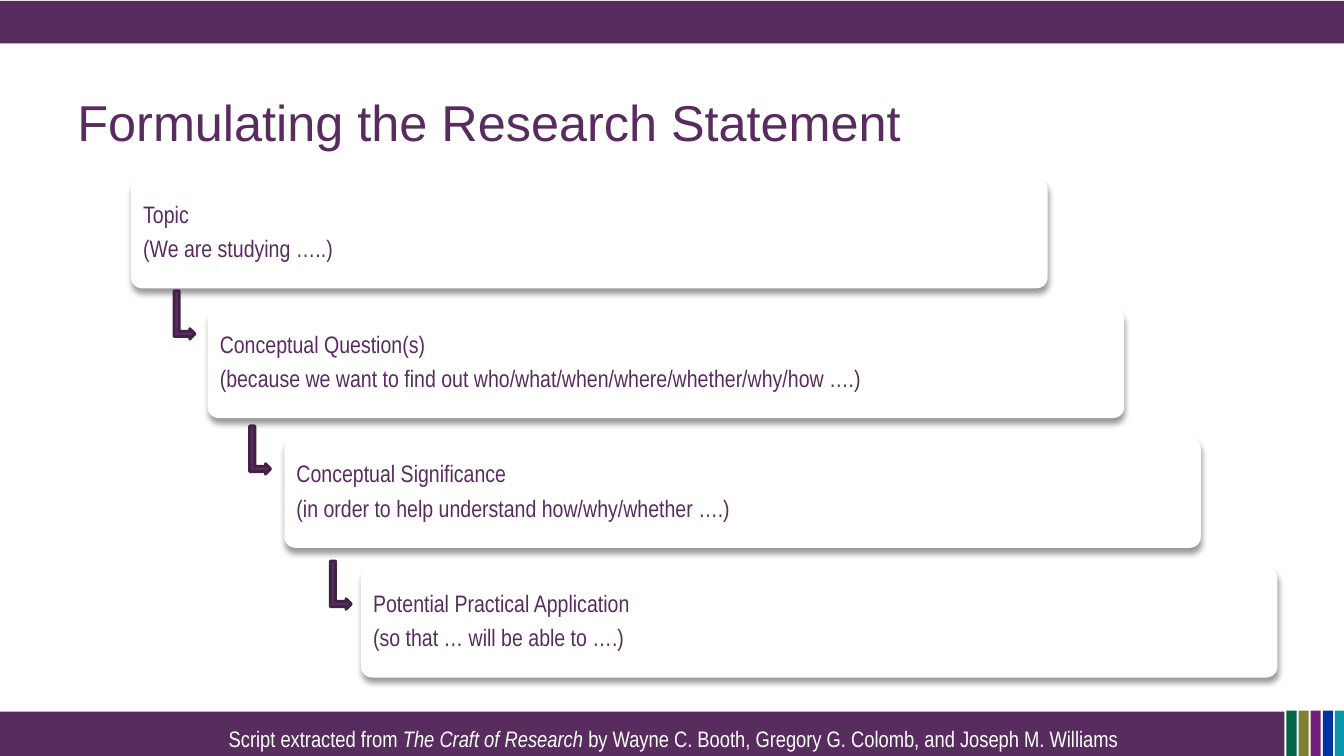
from pptx import Presentation
from pptx.dml.color import RGBColor
from pptx.enum.shapes import MSO_SHAPE
from pptx.enum.text import MSO_ANCHOR, PP_ALIGN
from pptx.oxml import parse_xml
from pptx.oxml.ns import nsdecls
from pptx.util import Inches, Pt

PLUM = RGBColor(0x59, 0x2C, 0x5F)
DARK = RGBColor(0x42, 0x21, 0x46)
WHITE = RGBColor(0xFF, 0xFF, 0xFF)
STRIPES = [
    RGBColor(0x00, 0x66, 0x47),
    RGBColor(0x7E, 0x80, 0x34),
    RGBColor(0x71, 0x21, 0x77),
    RGBColor(0x00, 0x33, 0xA0),
    RGBColor(0x09, 0x96, 0xA9),
]

TITLE = "Formulating the Research Statement"
STEPS = [
    ("Topic", "(We are studying …..)"),
    ("Conceptual Question(s)",
     "(because we want to find out who/what/when/where/whether/why/how ….)"),
    ("Conceptual Significance",
     "(in order to help understand how/why/whether ….)"),
    ("Potential Practical Application", "(so that … will be able to ….)"),
]
CREDIT = [
    ("Script extracted from ", False),
    ("The Craft of Research ", True),
    ("by Wayne C. Booth, Gregory G. Colomb, and Joseph M. Williams", False),
]
ARROWS = [1.59, 2.34, 3.14]

WIDE, HIGH = 13.33, 7.5
LEFT, TOP = 1.3, 1.77
RIGHT, DOWN = 0.76, 1.287
CARD_W, CARD_H = 9.09, 1.09

SHADOW = (
    f'<a:effectLst {nsdecls("a")}>'
    f'<a:outerShdw blurRad="{Pt(4)}" dist="{Pt(3.4)}" dir="5400000" '
    'algn="ctr" rotWithShape="0"><a:srgbClr val="000000">'
    '<a:alpha val="40000"/></a:srgbClr></a:outerShdw></a:effectLst>'
)

deck = Presentation()
deck.slide_width, deck.slide_height = Inches(WIDE), Inches(HIGH)
slide = deck.slides.add_slide(deck.slide_layouts[6])


def add_form(kind, x, y, w, h, fill):
    form = slide.shapes.add_shape(
        kind, Inches(x), Inches(y), Inches(w), Inches(h))
    form.shadow.inherit = False
    form.fill.solid()
    form.fill.fore_color.rgb = fill
    form.line.fill.background()
    return form


def add_box(x, y, w, h, anchor, pad=None):
    box = slide.shapes.add_textbox(
        Inches(x), Inches(y), Inches(w), Inches(h))
    frame = box.text_frame
    frame.word_wrap = True
    frame.vertical_anchor = anchor
    if pad is not None:
        frame.margin_left = frame.margin_right = Inches(pad)
        frame.margin_top = frame.margin_bottom = Inches(pad)
    return frame


def add_run(para, text, size, color, face="Arial Narrow", slant=False):
    run = para.add_run()
    run.text = text
    run.font.size = Pt(size)
    run.font.name = face
    run.font.italic = slant
    run.font.color.rgb = color


def add_card(step, lines):
    x, y = LEFT + step * RIGHT, TOP + step * DOWN
    card = add_form(MSO_SHAPE.ROUNDED_RECTANGLE, x, y, CARD_W, CARD_H, WHITE)
    card.adjustments[0] = 0.1
    props = card.element.spPr
    props.replace(props.find("{*}effectLst"), parse_xml(SHADOW))
    frame = add_box(x + 0.05, y + 0.03, 7.28, 1.02, MSO_ANCHOR.MIDDLE, 0.07)
    for row, line in enumerate(lines):
        para = frame.add_paragraph() if row else frame.paragraphs[0]
        para.line_spacing = 0.9
        para.space_before = Pt(6 * row)
        add_run(para, line, 17, PLUM)


add_form(MSO_SHAPE.RECTANGLE, 0, 7.06, 12.74, 0.45, PLUM)
for spot, tint in enumerate(STRIPES):
    add_form(MSO_SHAPE.RECTANGLE, 12.76 + 0.12 * spot, 7.05, 0.1, 0.45, tint)
add_form(MSO_SHAPE.RECTANGLE, 0, 0.01, WIDE, 0.42, PLUM)

head = add_box(0.67, 0.3, 12, 1.25, MSO_ANCHOR.BOTTOM)
add_run(head.paragraphs[0], TITLE, 36, PLUM, "Arial")

for step, lines in enumerate(STEPS):
    add_card(step, lines)

foot = add_box(1.42, 7.14, 10.52, 0.64, MSO_ANCHOR.TOP).paragraphs[0]
foot.alignment = PP_ALIGN.CENTER
for text, slant in CREDIT:
    add_run(foot, text, 16, WHITE, slant=slant)

for step, x in enumerate(ARROWS):
    arrow = add_form(
        MSO_SHAPE.BENT_UP_ARROW, x, 3.02 + 1.34 * step, 0.48, 0.21, PLUM)
    arrow.rotation = 90
    arrow.line.color.rgb = DARK
    arrow.line.width = Pt(2)

deck.save("out.pptx")
